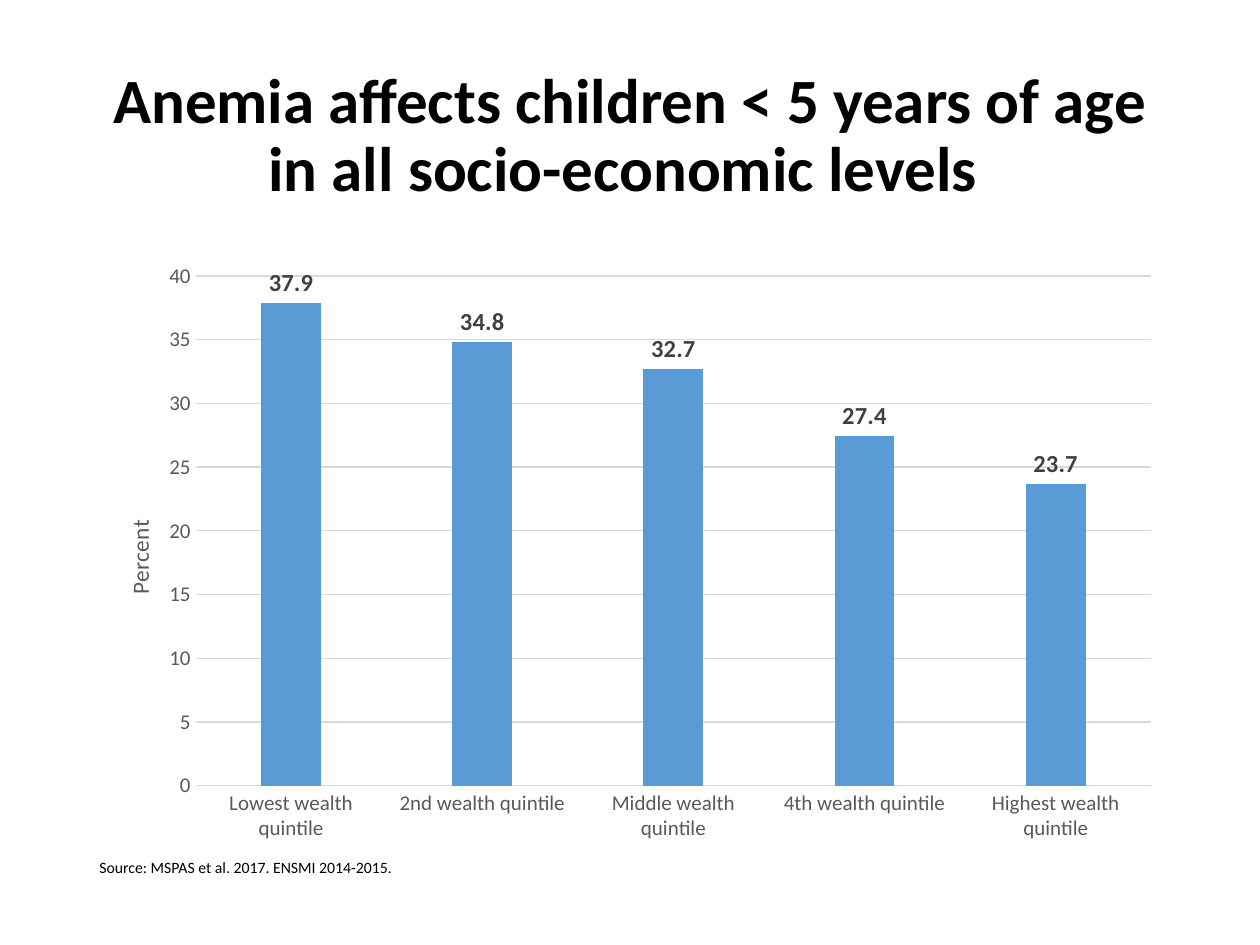
from pptx import Presentation
from pptx.chart.data import CategoryChartData
from pptx.dml.color import RGBColor
from pptx.enum.chart import XL_CHART_TYPE as Chart, XL_LABEL_POSITION as LabelPos, XL_TICK_MARK as Tick
from pptx.enum.text import MSO_ANCHOR as Anchor, MSO_AUTO_SIZE as AutoSize, PP_ALIGN as Align
from pptx.oxml import parse_xml
from pptx.oxml.ns import nsdecls, qn
from pptx.util import Inches, Pt

BLACK = RGBColor(0x00, 0x00, 0x00)
DARK_GRAY = RGBColor(0x40, 0x40, 0x40)
GRAY = RGBColor(0x59, 0x59, 0x59)
LIGHT_GRAY = RGBColor(0xD9, 0xD9, 0xD9)
BLUE = RGBColor(0x5B, 0x9B, 0xD5)

LEFT, WIDTH = 0.69, 8.62
ANEMIA_BY_QUINTILE = {
    "Lowest wealth quintile": 37.9,
    "2nd wealth quintile": 34.8,
    "Middle wealth quintile": 32.7,
    "4th wealth quintile": 27.4,
    "Highest wealth quintile": 23.7,
}


def set_layout(parent, index, **fractions):
    """Place a chart part by fractions of the chart's size."""
    for old in parent.findall(qn("c:layout")):
        parent.remove(old)
    target = '<c:layoutTarget val="inner"/>' if "w" in fractions else ""
    modes = '<c:xMode val="edge"/><c:yMode val="edge"/>'
    values = "".join(f'<c:{k} val="{v}"/>' for k, v in fractions.items())
    parent.insert(index, parse_xml(
        f'<c:layout {nsdecls("c")}><c:manualLayout>{target}{modes}{values}'
        '</c:manualLayout></c:layout>'))


class SlideBuilder:
    font = "Calibri"

    def __init__(self, prs):
        self.s = prs.slides.add_slide(prs.slide_layouts[6])

    def style(self, font, size, color, bold=False):
        font.name, font.size, font.bold = self.font, Pt(size), bold
        font.color.rgb = color

    def text(self, box, text, size, bold=False, align=Align.LEFT, anchor=Anchor.TOP,
             spacing=1.0, wrap=True):
        tf = self.s.shapes.add_textbox(*map(Inches, box)).text_frame
        tf.word_wrap = wrap
        tf.auto_size = AutoSize.NONE if wrap else AutoSize.SHAPE_TO_FIT_TEXT
        tf.vertical_anchor = anchor
        p = tf.paragraphs[0]
        p.alignment, p.line_spacing = align, spacing
        r = p.add_run()
        r.text = text
        self.style(r.font, size, BLACK, bold)

    def column_chart(self, box, values, axis_title):
        data = CategoryChartData()
        data.categories = list(values)
        data.add_series("Series 1", list(values.values()))
        chart = self.s.shapes.add_chart(
            Chart.COLUMN_CLUSTERED, *map(Inches, box), data).chart
        self.style(chart.font, 10, BLACK)
        chart.has_title = chart.has_legend = False
        self.columns(chart.plots[0])
        self.axes(chart.category_axis, chart.value_axis, axis_title)
        plot_area = chart._chartSpace.chart.plotArea
        set_layout(plot_area, 0, x=0.1, y=0.04, w=0.88, h=0.85)

    def columns(self, plot):
        plot.gap_width, plot.overlap = 219, -27
        plot.vary_by_categories = False
        series = plot.series[0]
        series.format.fill.solid()
        series.format.fill.fore_color.rgb = BLUE
        labels = series.data_labels
        labels.show_value = True
        labels.position = LabelPos.OUTSIDE_END
        self.style(labels.font, 14, DARK_GRAY, bold=True)

    def axes(self, cat, val, title):
        for axis in (cat, val):
            axis.major_tick_mark = axis.minor_tick_mark = Tick.NONE
            self.style(axis.tick_labels.font, 12, GRAY)
        val.minimum_scale, val.maximum_scale, val.major_unit = 0, 40, 5
        val.has_major_gridlines = True
        val.format.line.fill.background()
        for line in (cat.format.line, val.major_gridlines.format.line):
            line.color.rgb = LIGHT_GRAY
            line.width = Pt(0.75)
        r = val.axis_title.text_frame.paragraphs[0].add_run()
        r.text = title
        self.style(r.font, 13.3, GRAY)
        set_layout(val.axis_title._element, 1, x=0.03, y=0.44)


def main():
    prs = Presentation()
    prs.slide_width, prs.slide_height = Inches(10), Inches(7.5)
    slide = SlideBuilder(prs)
    slide.text((LEFT, 0.36, WIDTH, 1.45),
               "Anemia affects children < 5 years of age in all socio-economic levels ",
               36, bold=True, align=Align.CENTER, anchor=Anchor.MIDDLE, spacing=0.9)
    slide.column_chart((LEFT, 2, WIDTH, 4.76), ANEMIA_BY_QUINTILE, "Percent")
    slide.text((LEFT, 6.76, 2.59, 0.25), "Source: MSPAS et al. 2017. ENSMI 2014-2015.",
               9, wrap=False)
    prs.save("out.pptx")


if __name__ == "__main__":
    main()
